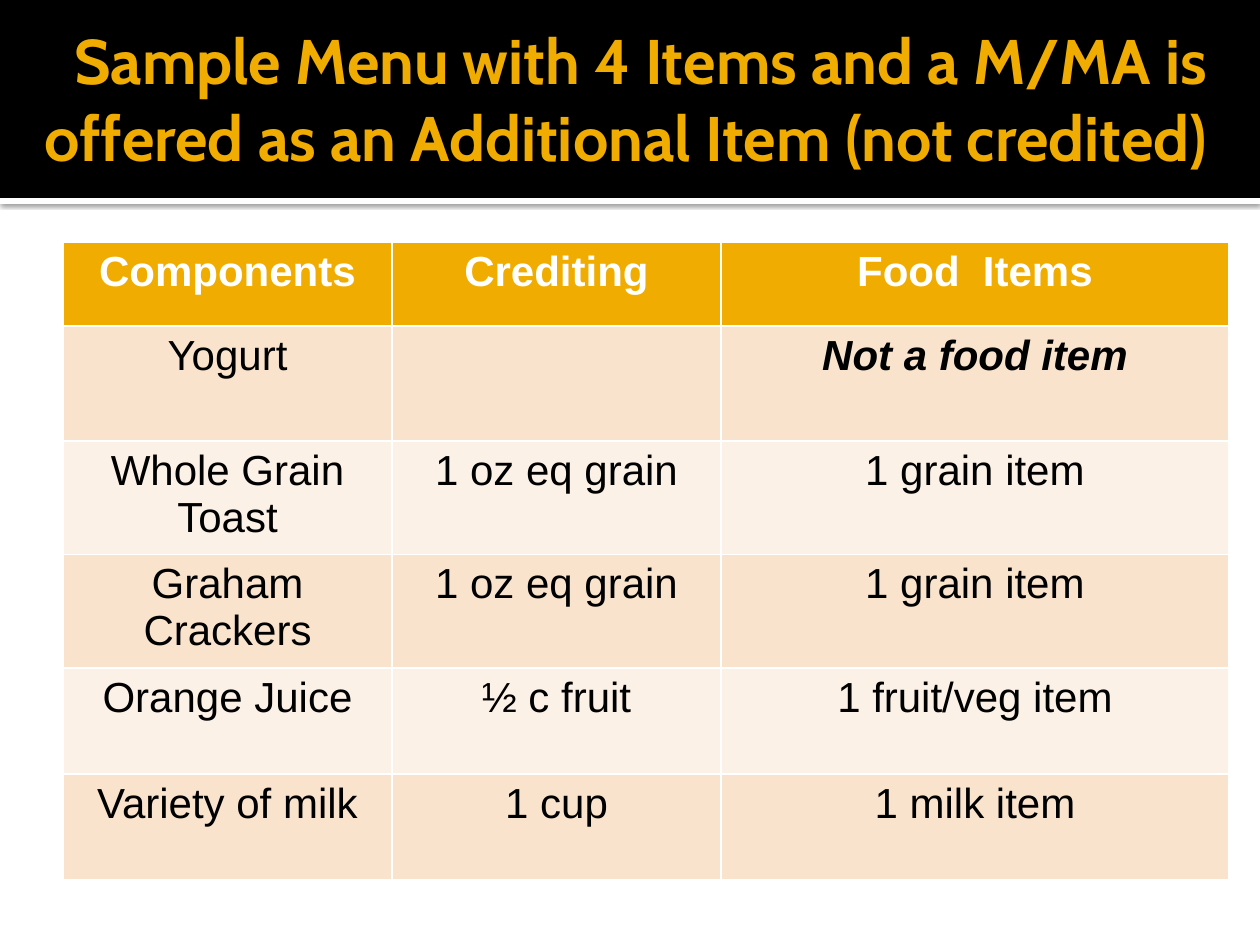
from lxml import etree
from pptx import Presentation
from pptx import util as u
from pptx.dml.color import RGBColor
from pptx.enum import shapes, text
from pptx.oxml.ns import qn

GOLD = RGBColor(0xF0, 0xAD, 0x00)
PEACH = RGBColor(0xF9, 0xE3, 0xCC)
CREAM = RGBColor(0xFC, 0xF1, 0xE7)
WHITE = RGBColor(255, 255, 255)
BLACK = RGBColor(0, 0, 0)

# Content
TITLE = [
    (" ", 39.6),
    ("Sample Menu with 4 Items and a M/MA is offered as an "
     "Additional Item (not credited) ", 36),
]
MENU = [
    ("Components", "Crediting", "Food  Items"),
    ("Yogurt", "", "Not a food item"),
    ("Whole Grain Toast", "1 oz eq grain", "1 grain item"),
    ("Graham Crackers", "1 oz eq grain", "1 grain item"),
    ("Orange Juice", "½ c fruit", "1 fruit/veg item"),
    ("Variety of milk", "1 cup", "1 milk item"),
]
NOTED = "Not a food item"
COLS = [329, 329, 508]
ROWS = [84, 115] + [106] * 4
WIDE, HIGH, BAND = 1260, 945, 198


def px(n):
    return u.Emu(round(n * 914400 / 126))


def style(run, font, size, color, bold, italic=False):
    run.font.name = font
    run.font.size = u.Pt(size)
    run.font.color.rgb = color
    run.font.bold = bold
    run.font.italic = italic


def bar(slide, top, high, color):
    rect = slide.shapes.add_shape(shapes.MSO_SHAPE.RECTANGLE,
                                  0, px(top), px(WIDE), px(high))
    rect.shadow.inherit = False
    rect.fill.solid()
    rect.fill.fore_color.rgb = color
    rect.line.fill.background()
    return rect


def shade(rect):
    effects = rect._element.spPr.find(qn("a:effectLst"))
    outer = etree.SubElement(effects, qn("a:outerShdw"),
                             blurRad=str(u.Pt(2.5)), dist=str(u.Pt(0.8)),
                             dir="5400000", algn="tl", rotWithShape="0")
    tint = etree.SubElement(outer, qn("a:srgbClr"), val=str(BLACK))
    etree.SubElement(tint, qn("a:alpha"), val="60000")


def main():
    prs = Presentation()
    prs.slide_width, prs.slide_height = px(WIDE), px(HIGH)
    slide = prs.slides.add_slide(prs.slide_layouts[6])

    # Header band with a shadowed white edge
    shade(bar(slide, BAND, 6, WHITE))
    bar(slide, 0, BAND, BLACK)

    # Title
    box = slide.shapes.add_textbox(px(21), px(21), px(1218), px(147))
    frame = box.text_frame
    frame.word_wrap = True
    frame.vertical_anchor = text.MSO_ANCHOR.MIDDLE
    frame.margin_left = u.Inches(0.1)
    frame.margin_right = u.Inches(0.05)
    para = frame.paragraphs[0]
    para.alignment = text.PP_ALIGN.CENTER
    for words, size in TITLE:
        run = para.add_run()
        run.text = words
        style(run, "Cabin", size, GOLD, True)

    # Menu table: the default style draws the white rules
    table = slide.shapes.add_table(len(ROWS), len(COLS), px(63), px(242),
                                   px(sum(COLS)), px(sum(ROWS))).table
    for col, wide in zip(table.columns, COLS):
        col.width = px(wide)
    for r, (row, high) in enumerate(zip(table.rows, ROWS)):
        row.height = px(high)
        head = r == 0
        fill = GOLD if head else PEACH if r % 2 else CREAM
        for cell, words in zip(row.cells, MENU[r]):
            cell.fill.solid()
            cell.fill.fore_color.rgb = fill
            para = cell.text_frame.paragraphs[0]
            para.text = words
            para.alignment = text.PP_ALIGN.CENTER
            noted = words == NOTED
            for run in para.runs:
                style(run, "Arial", 24, WHITE if head else BLACK,
                      head or noted, noted)

    prs.save("out.pptx")


if __name__ == "__main__":
    main()
